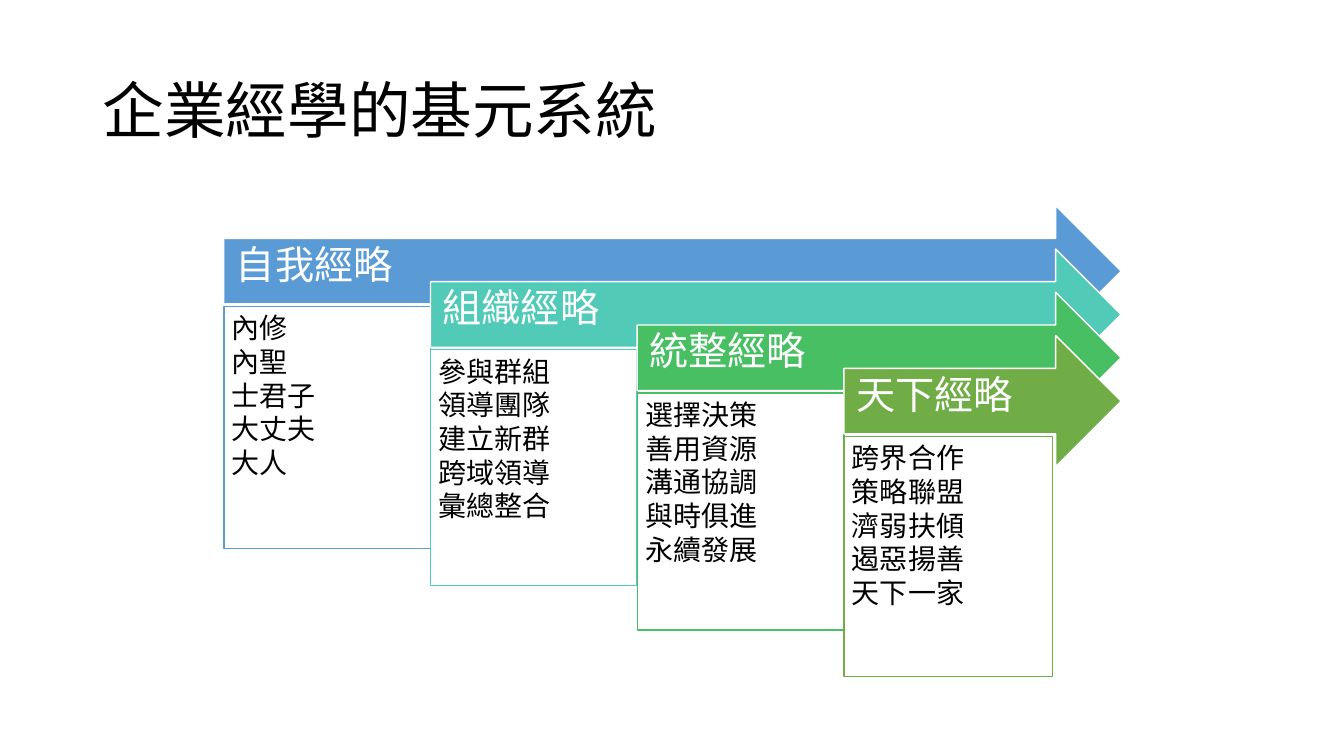
from dataclasses import dataclass

from pptx import Presentation
from pptx import util as u
from pptx.dml.color import RGBColor
from pptx.enum import shapes, text
from pptx.oxml import ns
from lxml import etree

PX = 9144


@dataclass(frozen=True)
class Theme:
    font: str = "Noto Sans CJK SC"
    dark: str = "000000"
    light: str = "FFFFFF"
    title_size: int = 44
    label_size: int = 28
    item_size: int = 20
    line_spacing: float = 0.9
    item_gap: float = 2.5
    outline: int = 1


THEME = Theme()
STAGES = [
    ("自我經略", "5B9BD5", 205, 240, ["內修", "內聖", "士君子", "大丈夫", "大人"]),
    ("組織經略", "52CAB8", 205, 234, ["參與群組", "領導團隊", "建立新群", "跨域領導", "彙總整合"]),
    ("統整經略", "49BF64", 205, 235, ["選擇決策", "善用資源", "溝通協調", "與時俱進", "永續發展"]),
    ("天下經略", "70AD47", 207, 238, ["跨界合作", "策略聯盟", "濟弱扶傾", "遏惡揚善", "天下一家"]),
]
STEP_X, STEP_Y = 205, 43
ARROW_HEIGHT, PANEL_DROP = 130, 100


def px(*lengths):
    return [u.Emu(length * PX) for length in lengths]


def write(shape, lines, size, color, insets, anchor, gap=0):
    frame = shape.text_frame
    frame.text = "\n".join(lines)
    frame.word_wrap = True
    frame.vertical_anchor = anchor
    (frame.margin_left, frame.margin_top,
     frame.margin_right, frame.margin_bottom) = px(*insets)
    for para in frame.paragraphs:
        para.alignment = text.PP_ALIGN.LEFT
        para.line_spacing = THEME.line_spacing
        para.space_after = u.Pt(gap)
        for span in para.runs:
            span.font.size = u.Pt(size)
            span.font.name = THEME.font
            span.font.color.rgb = RGBColor.from_string(color)
            east_asian = etree.SubElement(span.font._element, ns.qn("a:ea"))
            east_asian.set("typeface", THEME.font)


def add_block(page, kind, box, fill, line):
    shape = page.shapes.add_shape(kind, *px(*box))
    shape.shadow.inherit = False
    shape.fill.solid()
    shape.fill.fore_color.rgb = RGBColor.from_string(fill)
    shape.line.color.rgb = RGBColor.from_string(line)
    shape.line.width = u.Pt(THEME.outline)
    return shape


def add_title(page, box, title):
    shape = page.shapes.add_textbox(*px(*box))
    write(shape, [title], THEME.title_size, THEME.dark,
          (10, 5, 10, 5), text.MSO_ANCHOR.MIDDLE)


def add_stage(page, box, stage):
    left, top, width = box
    label, color, panel_width, panel_height, items = stage
    arrow = add_block(page, shapes.MSO_SHAPE.RIGHT_ARROW,
                      (left, top, width, ARROW_HEIGHT), color, THEME.light)
    write(arrow, [label], THEME.label_size, THEME.light,
          (12, 12, 28, 21), text.MSO_ANCHOR.MIDDLE)
    panel = add_block(page, shapes.MSO_SHAPE.RECTANGLE,
                      (left, top + PANEL_DROP, panel_width, panel_height),
                      THEME.light, color)
    write(panel, items, THEME.item_size, THEME.dark,
          (8, 8, 8, 8), text.MSO_ANCHOR.TOP, THEME.item_gap)


def add_cascade(page, box):
    left, top, width = box
    for index, stage in enumerate(STAGES):
        shift = index * STEP_X
        add_stage(page, (left + shift, top + index * STEP_Y, width - shift), stage)


def main():
    deck = Presentation()
    deck.slide_width, deck.slide_height = px(1333, 750)
    page = deck.slides.add_slide(deck.slide_layouts[6])
    add_title(page, (92, 40, 1150, 145), "企業經學的基元系統")
    add_cascade(page, (222, 204, 890))
    deck.save("out.pptx")


if __name__ == "__main__":
    main()
